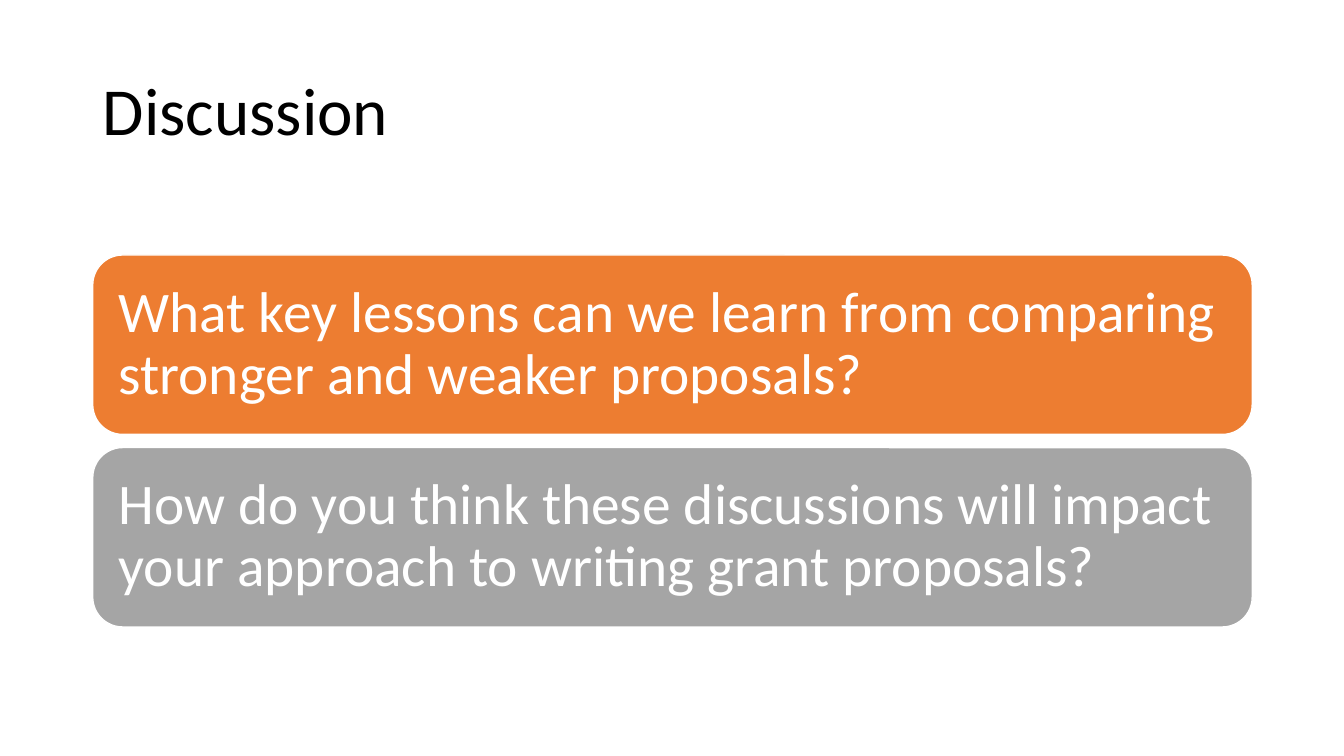
"""Build the discussion slide with a title and two question cards."""
import pptx
import pptx.util
import pptx.dml.color
import pptx.enum.shapes
import pptx.enum.text

Inches = pptx.util.Inches
Pt = pptx.util.Pt

TITLE = "Discussion"
CARDS = [
    ("What key lessons can we learn from comparing stronger and weaker proposals?", "ED7D31"),
    ("How do you think these discussions will impact your approach to writing grant proposals?", "A5A5A5"),
]
LEFT, WIDTH = 0.92, 11.5
TOP, HIGH, STEP = 2.53, 1.78, 1.91
INSET = 0.17


def color(text):
    return pptx.dml.color.RGBColor.from_string(text)


def apply(target, values):
    for name, value in values.items():
        setattr(target, name, value)


def write(shape, text, size, ink, inset):
    frame = shape.text_frame
    frame.text = text
    apply(frame, {
        "word_wrap": True,
        "auto_size": pptx.enum.text.MSO_AUTO_SIZE.NONE,
        "vertical_anchor": pptx.enum.text.MSO_ANCHOR.MIDDLE,
        "margin_left": Inches(inset),
        "margin_right": Inches(inset),
    })
    para = frame.paragraphs[0]
    apply(para, {"alignment": pptx.enum.text.PP_ALIGN.LEFT, "line_spacing": 0.9})
    font = para.runs[0].font
    apply(font, {"name": "Calibri", "size": Pt(size)})
    font.color.rgb = color(ink)


def card(slide, top, text, fill):
    shape = slide.shapes.add_shape(
        pptx.enum.shapes.MSO_SHAPE.ROUNDED_RECTANGLE,
        Inches(LEFT), Inches(top), Inches(WIDTH), Inches(HIGH))
    shape.shadow.inherit = False
    shape.fill.solid()
    shape.fill.fore_color.rgb = color(fill)
    shape.line.color.rgb = color("FFFFFF")
    shape.line.width = Pt(1)
    write(shape, text, 41, "FFFFFF", INSET)


def main():
    deck = pptx.Presentation()
    apply(deck, {"slide_width": Inches(13.33), "slide_height": Inches(7.5)})
    slide = deck.slides.add_slide(deck.slide_layouts[5])
    title = slide.shapes.title
    apply(title, {"left": Inches(LEFT), "top": Inches(0.4),
                  "width": Inches(WIDTH), "height": Inches(1.45)})
    write(title, TITLE, 48, "000000", 0.1)
    for row, (text, fill) in enumerate(CARDS):
        card(slide, TOP + row * STEP, text, fill)
    deck.save("out.pptx")


if __name__ == "__main__":
    main()
